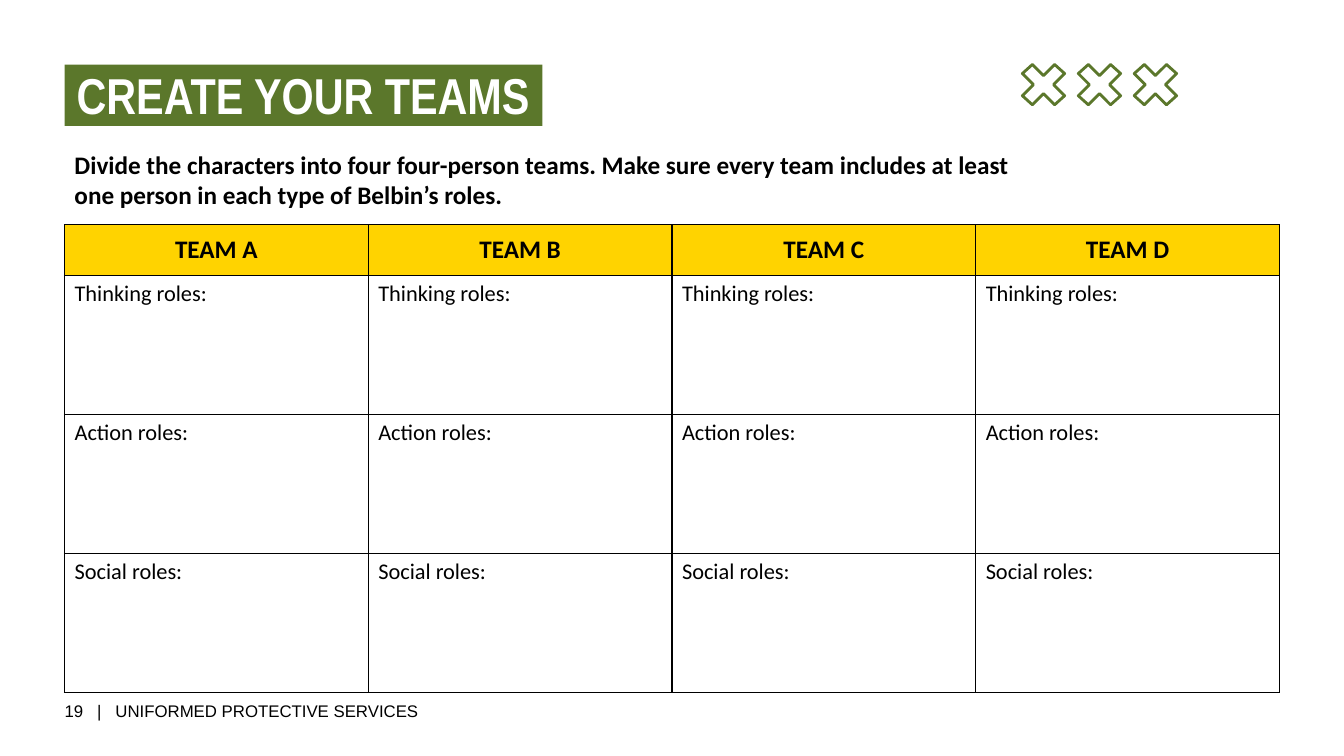
from dataclasses import dataclass

from pptx import Presentation
from pptx.dml.color import RGBColor
from pptx.enum.text import MSO_ANCHOR as Anchor, MSO_AUTO_SIZE as AutoSize, PP_ALIGN as Align
from pptx.oxml import parse_xml
from pptx.oxml.ns import nsdecls
from pptx.util import Inches, Pt


@dataclass(frozen=True)
class Theme:
    """Colours, fonts and type sizes of the slide."""
    green: str = "5B772B"
    yellow: str = "FFD300"
    white: str = "FFFFFF"
    black: str = "000000"
    title_font: str = "Arial Narrow"
    body_font: str = "Calibri"
    footer_font: str = "Arial"
    title_size: int = 36
    heading_size: int = 18
    cell_size: int = 16
    footer_size: int = 12


THEME = Theme()
TEAMS = ("TEAM A", "TEAM B", "TEAM C", "TEAM D")
ROLES = ("Thinking roles:", "Action roles:", "Social roles:")
LEFT = 0.64
HEADER_HEIGHT, ROLE_HEIGHT = 0.5, 1.38
CROSS_CENTRE, CROSS_PITCH, CROSS_COUNT = (10.35, 0.84), 0.555, 3
CROSS_OUTLINE = ((0.21, -0.11), (0.11, -0.2), (0, -0.09), (-0.11, -0.2),
                 (-0.21, -0.11), (-0.1, 0), (-0.21, 0.11), (-0.11, 0.2),
                 (0, 0.09), (0.11, 0.2), (0.21, 0.11), (0.1, 0))


def set_attributes(target, values):
    """Set each named attribute of an object."""
    for name, value in values.items():
        setattr(target, name, value)


def place(shape, left, top, width, height):
    """Put a shape at a position given in inches."""
    names = ("left", "top", "width", "height")
    set_attributes(shape, dict(zip(names, map(Inches, (left, top, width, height)))))


def write(frame, text, font, size, colour=THEME.black, bold=False, align=Align.LEFT):
    """Write one formatted paragraph into a text frame."""
    frame.text = text
    paragraph = frame.paragraphs[0]
    paragraph.alignment = align
    run_font = paragraph.runs[0].font
    set_attributes(run_font, {"name": font, "size": Pt(size), "bold": bold})
    run_font.color.rgb = RGBColor.from_string(colour)


def format_frame(frame, margins, anchor=Anchor.TOP, wrap=True):
    """Set margins in inches, anchor and wrapping of a text frame."""
    names = ("margin_left", "margin_top", "margin_right", "margin_bottom")
    set_attributes(frame, {**dict(zip(names, map(Inches, margins))),
                           "vertical_anchor": anchor, "word_wrap": wrap,
                           "auto_size": AutoSize.NONE})


def fill_solid(fill, colour):
    """Give a fill one solid colour."""
    fill.solid()
    fill.fore_color.rgb = RGBColor.from_string(colour)


def add_title(slide, text):
    """Turn the title placeholder into a green banner."""
    title = slide.shapes.title
    place(title, LEFT, 0.64, 4.74, 0.61)
    fill_solid(title.fill, THEME.green)
    format_frame(title.text_frame, (0.12, 0, 0.08, 0), wrap=False)
    write(title.text_frame, text, THEME.title_font, THEME.title_size, THEME.white, True)


def add_text(slide, box, margin, anchor, *text_format):
    """Add a wrapped text box with equal margins."""
    frame = slide.shapes.add_textbox(*map(Inches, box)).text_frame
    format_frame(frame, (margin,) * 4, anchor)
    write(frame, *text_format)


def add_crosses(slide):
    """Draw the row of outlined crosses as one freeform."""
    centre_x, centre_y = CROSS_CENTRE
    builder = None
    for index in range(CROSS_COUNT):
        x = centre_x + index * CROSS_PITCH
        start, *points = [(Inches(x + dx), Inches(centre_y + dy))
                          for dx, dy in CROSS_OUTLINE]
        if builder is None:
            builder = slide.shapes.build_freeform(*start)
        else:
            builder.move_to(*start)
        builder.add_line_segments(points, close=True)
    crosses = builder.convert_to_shape()
    crosses.shadow.inherit = False
    crosses.fill.background()
    crosses.line.color.rgb = RGBColor.from_string(THEME.green)
    crosses.line.width = Pt(2)


def add_borders(cell, colour, width):
    """Draw all four borders of a table cell."""
    properties = cell._tc.get_or_add_tcPr()
    for side in ("lnL", "lnR", "lnT", "lnB"):
        properties.append(parse_xml(
            f'<a:{side} {nsdecls("a")} w="{Pt(width)}"><a:solidFill>'
            f'<a:srgbClr val="{colour}"/></a:solidFill></a:{side}>'))


def format_cell(cell, text, is_header):
    """Fill, border and write one table cell."""
    add_borders(cell, THEME.black, 1)
    fill_solid(cell.fill, THEME.yellow if is_header else THEME.white)
    cell.vertical_anchor = Anchor.MIDDLE if is_header else Anchor.TOP
    write(cell.text_frame, text, THEME.body_font,
          THEME.heading_size if is_header else THEME.cell_size,
          bold=is_header, align=Align.CENTER if is_header else Align.LEFT)


def add_team_table(slide):
    """Add the table of roles for each team."""
    rows = [TEAMS] + [(role,) * len(TEAMS) for role in ROLES]
    height = HEADER_HEIGHT + ROLE_HEIGHT * len(ROLES)
    table = slide.shapes.add_table(
        len(rows), len(TEAMS), *map(Inches, (LEFT, 2.23, 12.05, height))).table
    set_attributes(table, {"first_row": False, "horz_banding": False})
    for row_index, texts in enumerate(rows):
        is_header = row_index == 0
        table.rows[row_index].height = Inches(HEADER_HEIGHT if is_header else ROLE_HEIGHT)
        for column_index, text in enumerate(texts):
            format_cell(table.cell(row_index, column_index), text, is_header)


def main():
    """Build and save the team slide."""
    presentation = Presentation()
    set_attributes(presentation, {"slide_width": Inches(13.33), "slide_height": Inches(7.5)})
    slide = presentation.slides.add_slide(presentation.slide_layouts.get_by_name("Title Only"))
    fill_solid(slide.background.fill, THEME.white)
    add_text(slide, (LEFT, 6.95, 3.82, 0.2), 0, Anchor.MIDDLE,
             "19   |   UNIFORMED PROTECTIVE SERVICES", THEME.footer_font, THEME.footer_size)
    add_title(slide, "CREATE YOUR TEAMS")
    add_crosses(slide)
    add_text(slide, (LEFT, 1.38, 9.61, 1.11), 0.1, Anchor.TOP,
             "Divide the characters into four four-person teams. Make sure every team "
             "includes at least one person in each type of Belbin’s roles.",
             THEME.body_font, THEME.heading_size, THEME.black, True)
    add_team_table(slide)
    presentation.save("out.pptx")


if __name__ == "__main__":
    main()
